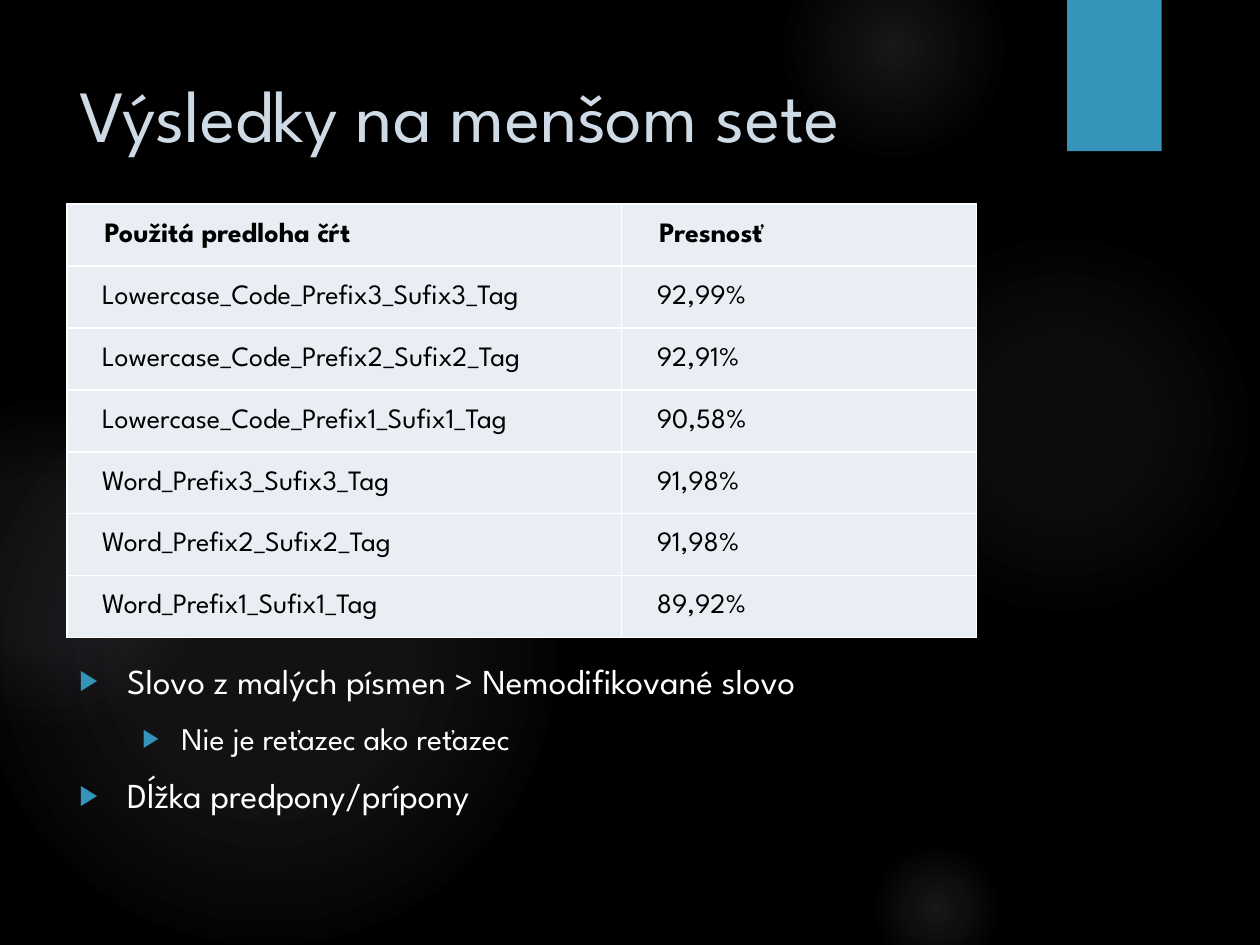
from dataclasses import dataclass
from typing import NamedTuple

from lxml import etree
from pptx import Presentation
from pptx.dml.color import RGBColor
from pptx.enum.shapes import MSO_SHAPE
from pptx.enum.text import MSO_ANCHOR, MSO_AUTO_SIZE, PP_ALIGN
from pptx.oxml import parse_xml
from pptx.oxml.ns import nsdecls, qn
from pptx.util import Emu, Inches, Pt

OVAL, RECT = MSO_SHAPE.OVAL, MSO_SHAPE.RECTANGLE
TOP, MIDDLE = MSO_ANCHOR.TOP, MSO_ANCHOR.MIDDLE
LEFT = PP_ALIGN.LEFT
NO_FIT = MSO_AUTO_SIZE.NONE
SLIDE_W, SLIDE_H = Inches(10), Inches(7.5)


@dataclass(frozen=True)
class Theme:
    font: str = "League Spartan"
    back: str = "000000"
    glow: str = "AAA7BC"
    accent: str = "3494BA"
    title: str = "CEDBE6"
    text: str = "FFFFFF"
    cell: str = "E8EEF3"
    cell_text: str = "000000"
    border: str = "FFFFFF"
    title_size: int = 42
    cell_size: int = 16
    body_sizes: tuple[int, ...] = (20, 18)


class Box(NamedTuple):
    """Left, top, width and height in percent of the slide's size."""
    x: float
    y: float
    w: float
    h: float

    def emu(self) -> list[Emu]:
        sides = (SLIDE_W, SLIDE_H, SLIDE_W, SLIDE_H)
        return [Emu(round(side * share / 100)) for side, share in zip(sides, self)]


class Glow(NamedTuple):
    box: Box
    stops: tuple[tuple[int, int], ...]  # position and opacity, in percent


class Item(NamedTuple):
    text: str
    level: int = 0


T = Theme()
TITLE_BOX = Box(5.3, 6.67, 77.2, 20.4)
TABLE_BOX = Box(5.3, 21.6, 72.2, 45.87)
BODY_BOX = Box(5.3, 69.07, 73.4, 27.2)
TAB_BOX = Box(84.7, 0, 7.5, 16)
COLUMN_SHARES = (0.61, 0.39)
INDENTS = ((0.38, 0.38), (0.81, 0.31))  # margin and hanging, by level

GLOWS = [
    Glow(Box(68.9, 24.4, 30.8, 41.07), ((0, 7), (36, 6), (69, 0))),
    Glow(Box(62.2, -6.67, 17.5, 23.33), ((0, 14), (36, 7), (73, 0))),
    Glow(Box(68.9, 88.93, 10.8, 14.4), ((0, 14), (36, 7), (66, 0))),
    Glow(Box(-1.7, 38.93, 45.8, 61.07), ((0, 11), (36, 10), (75, 0))),
    Glow(Box(-9.2, 42.27, 25.8, 34.4), ((0, 8), (36, 8), (72, 0))),
]
ROWS = [
    ("Použitá predloha čŕt", "Presnosť"),
    ("Lowercase_Code_Prefix3_Sufix3_Tag", "92,99%"),
    ("Lowercase_Code_Prefix2_Sufix2_Tag", "92,91%"),
    ("Lowercase_Code_Prefix1_Sufix1_Tag", "90,58%"),
    ("Word_Prefix3_Sufix3_Tag", "91,98%"),
    ("Word_Prefix2_Sufix2_Tag", "91,98%"),
    ("Word_Prefix1_Sufix1_Tag", "89,92%"),
]
ITEMS = [
    Item("Slovo z malých písmen > Nemodifikované slovo"),
    Item("Nie je reťazec ako reťazec", 1),
    Item("Dĺžka predpony/prípony"),
]


def write(p, text: str, *, size: int, color: str, bold: bool = False) -> None:
    r = p.add_run()
    r.text = text
    r.font.name, r.font.size, r.font.bold = T.font, Pt(size), bold
    r.font.color.rgb = RGBColor.from_string(color)
    p.alignment = LEFT


def add_shape(s, kind, box: Box):
    sp = s.shapes.add_shape(kind, *box.emu())
    sp.shadow.inherit = False
    sp.line.fill.background()
    return sp


def add_glow(s, glow: Glow) -> None:
    sp = add_shape(s, OVAL, glow.box)
    stops = "".join(
        f'<a:gs pos="{pos * 1000}"><a:srgbClr val="{T.glow}">'
        f'<a:alpha val="{alpha * 1000}"/></a:srgbClr></a:gs>'
        for pos, alpha in glow.stops)
    geometry = sp._element.spPr.find(qn("a:prstGeom"))
    geometry.addnext(parse_xml(
        f'<a:gradFill {nsdecls("a")}><a:gsLst>{stops}</a:gsLst><a:path path="circle">'
        '<a:fillToRect l="50000" t="50000" r="50000" b="50000"/></a:path></a:gradFill>'))


def add_tab(s) -> None:
    sp = add_shape(s, RECT, TAB_BOX)
    sp.fill.solid()
    sp.fill.fore_color.rgb = RGBColor.from_string(T.accent)
    sp._element.spPr.find(qn("a:effectLst")).append(parse_xml(
        f'<a:outerShdw {nsdecls("a")} blurRad="{Pt(3)}" dist="{Pt(2)}" dir="5400000">'
        '<a:srgbClr val="000000"><a:alpha val="45000"/></a:srgbClr></a:outerShdw>'))


def place(s, sp, box: Box):
    """Bring a placeholder to the front of its box and return its text frame."""
    s.shapes._spTree.append(sp._element)
    sp.left, sp.top, sp.width, sp.height = box.emu()
    tf = sp.text_frame
    tf.word_wrap, tf.auto_size, tf.vertical_anchor = True, NO_FIT, TOP
    return tf


def format_cell(cell, text: str, header: bool) -> None:
    cell.fill.solid()
    cell.fill.fore_color.rgb = RGBColor.from_string(T.cell)
    cell.vertical_anchor = MIDDLE
    cell.margin_left = Inches(0.3 if header else 0.28)
    cell.margin_top = cell.margin_right = Inches(0.01)
    cell.margin_bottom = 0
    write(cell.text_frame.paragraphs[0], text,
          size=T.cell_size, color=T.cell_text, bold=header)
    tc_pr = cell._tc.get_or_add_tcPr()
    for i, side in enumerate(("lnL", "lnR", "lnT", "lnB")):
        tc_pr.insert(i, parse_xml(
            f'<a:{side} {nsdecls("a")} w="{Pt(1)}"><a:solidFill>'
            f'<a:srgbClr val="{T.border}"/></a:solidFill></a:{side}>'))


def add_results(s) -> None:
    x, y, w, h = TABLE_BOX.emu()
    table = s.shapes.add_table(len(ROWS), len(COLUMN_SHARES), x, y, w, h).table
    table.horz_banding = False
    for column, share in zip(table.columns, COLUMN_SHARES):
        column.width = Emu(round(w * share))
    for i, row in enumerate(ROWS):
        for j, text in enumerate(row):
            format_cell(table.cell(i, j), text, header=i == 0)


def add_bullet(p, level: int) -> None:
    p.level = level
    margin, hanging = INDENTS[level]
    p_pr = p._p.get_or_add_pPr()
    p_pr.set("marL", str(Inches(margin)))
    p_pr.set("indent", str(-Inches(hanging)))
    color = etree.SubElement(p_pr, qn("a:buClr"))
    etree.SubElement(color, qn("a:srgbClr"), val=T.accent)
    etree.SubElement(p_pr, qn("a:buSzPct"), val="80000")
    etree.SubElement(p_pr, qn("a:buFont"), typeface="Arial")
    etree.SubElement(p_pr, qn("a:buChar"), char="▶")


def fill_list(tf) -> None:
    for i, item in enumerate(ITEMS):
        p = tf.add_paragraph() if i else tf.paragraphs[0]
        add_bullet(p, item.level)
        p.space_before = Pt(10 if i else 0)
        write(p, item.text, size=T.body_sizes[item.level], color=T.text)


def main() -> None:
    prs = Presentation()
    prs.slide_width, prs.slide_height = SLIDE_W, SLIDE_H
    s = prs.slides.add_slide(prs.slide_layouts[1])
    s.background.fill.solid()
    s.background.fill.fore_color.rgb = RGBColor.from_string(T.back)
    for glow in GLOWS:
        add_glow(s, glow)
    add_tab(s)
    title = place(s, s.shapes.title, TITLE_BOX)
    write(title.paragraphs[0], "Výsledky na menšom sete",
          size=T.title_size, color=T.title)
    add_results(s)
    fill_list(place(s, s.placeholders[1], BODY_BOX))
    prs.save("out.pptx")


if __name__ == "__main__":
    main()
